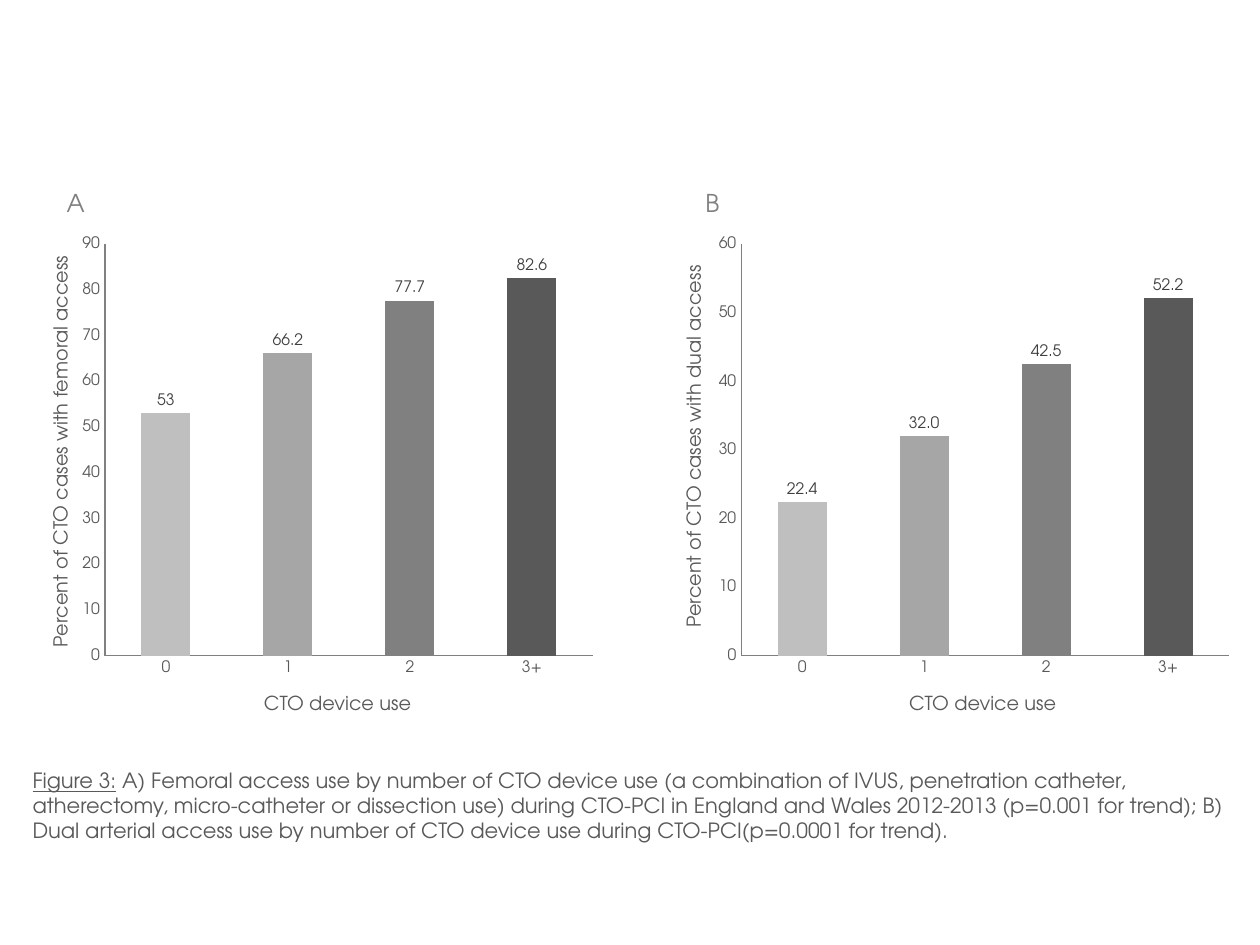
from dataclasses import dataclass

from pptx import Presentation
from pptx.chart.data import CategoryChartData
from pptx.dml.color import RGBColor
from pptx.enum.chart import XL_CHART_TYPE, XL_LABEL_POSITION, XL_TICK_MARK
from pptx.enum.text import MSO_AUTO_SIZE, PP_ALIGN
from pptx.util import Inches, Pt


@dataclass(frozen=True)
class Theme:
    font: str = "TeX Gyre Adventor"
    text: RGBColor = RGBColor(0x59, 0x59, 0x59)
    label: RGBColor = RGBColor(0x40, 0x40, 0x40)
    grey: RGBColor = RGBColor(0x80, 0x80, 0x80)
    bars: tuple = ("BFBFBF", "A6A6A6", "808080", "595959")
    chart_size: Pt = Pt(9)
    title_size: Pt = Pt(11)
    caption_size: Pt = Pt(12)
    letter_size: Pt = Pt(14)


theme = Theme()


def set_font(font, size, color):
    font.name = theme.font
    font.size = size
    font.color.rgb = color


def add_text(frame, texts, size, color=theme.text, align=PP_ALIGN.LEFT, wrap=True, rotation=0):
    """Add a text box at (left, top, width, height) inches, one run per text."""
    box = slide.shapes.add_textbox(*map(Inches, frame))
    box.rotation = rotation
    box.text_frame.word_wrap = wrap
    box.text_frame.auto_size = MSO_AUTO_SIZE.SHAPE_TO_FIT_TEXT
    para = box.text_frame.paragraphs[0]
    para.alignment = align
    set_font(para.font, size, color)
    for text in texts:
        para.add_run().text = text
    return para


deck = Presentation()
deck.slide_width, deck.slide_height = Inches(10), Inches(7.5)
slide = deck.slides.add_slide(deck.slide_layouts[6])

# letter, letter frame, chart left, category title left, values, axis maximum,
# label format, value title, value title frame, value title alignment
panels = [
    ("A", (0.43, 1.44, 0.4, 0.34), 0.57, 1.48, (53, 66.2, 77.7, 82.6), 90, "General",
     "Percent of CTO cases with femoral access", (-1.31, 3.3, 3.58, 0.29), PP_ALIGN.LEFT),
    ("B", (5.5, 1.44, 0.37, 0.34), 5.62, 6.6, (22.4, 32, 42.5, 52.2), 60, "0.0",
     "Percent of CTO cases with dual access", (3.61, 3.4, 3.79, 0.29), PP_ALIGN.CENTER),
]

for (letter, letter_frame, chart_left, title_left, values, maximum,
     label_format, value_title, value_frame, value_align) in panels:
    data = CategoryChartData()
    data.categories = ["0", "1", "2", "3+"]
    data.add_series("Series 1", values)
    chart = slide.shapes.add_chart(
        XL_CHART_TYPE.COLUMN_CLUSTERED, Inches(chart_left), Inches(1.81),
        Inches(4.22), Inches(3.62), data).chart
    chart.has_title = False
    chart.has_legend = False
    set_font(chart.font, theme.chart_size, theme.text)

    for axis in (chart.category_axis, chart.value_axis):
        axis.has_major_gridlines = False
        axis.major_tick_mark = axis.minor_tick_mark = XL_TICK_MARK.NONE
        axis.format.line.color.rgb = theme.grey
        axis.format.line.width = Pt(0.75)
        set_font(axis.tick_labels.font, theme.chart_size, theme.text)
    chart.value_axis.minimum_scale = 0
    chart.value_axis.maximum_scale = maximum
    chart.value_axis.major_unit = 10
    chart.value_axis.tick_labels.number_format = "0"
    chart.value_axis.tick_labels.number_format_is_linked = False

    plot = chart.plots[0]
    plot.gap_width = 149
    plot.overlap = -27
    plot.vary_by_categories = False
    for index, color in enumerate(theme.bars):
        fill = plot.series[0].points[index].format.fill
        fill.solid()
        fill.fore_color.rgb = RGBColor.from_string(color)
    labels = plot.series[0].data_labels
    labels.show_value = True
    labels.position = XL_LABEL_POSITION.OUTSIDE_END
    labels.number_format = label_format
    labels.number_format_is_linked = False
    set_font(labels.font, theme.chart_size, theme.label)

    add_text(letter_frame, [letter], theme.letter_size, theme.grey, wrap=False)
    add_text((title_left, 5.44, 2.4, 0.29), ["CTO device use"], theme.title_size,
             align=PP_ALIGN.CENTER)
    add_text(value_frame, [value_title], theme.title_size, align=value_align, rotation=270)

caption = add_text((0.16, 6.04, 9.68, 1.11), [
    "Figure 3:",
    " A) Femoral access use by number of CTO device use (a combination of IVUS, "
    "penetration catheter, atherectomy, micro-catheter or dissection use) during CTO-PCI "
    "in England and Wales 2012-2013 (p=0.001 for trend); B) Dual arterial access use by "
    "number of CTO device use during CTO-PCI(p=0.0001 for trend).",
], theme.caption_size)
caption.runs[0].font.underline = True

deck.save("out.pptx")
